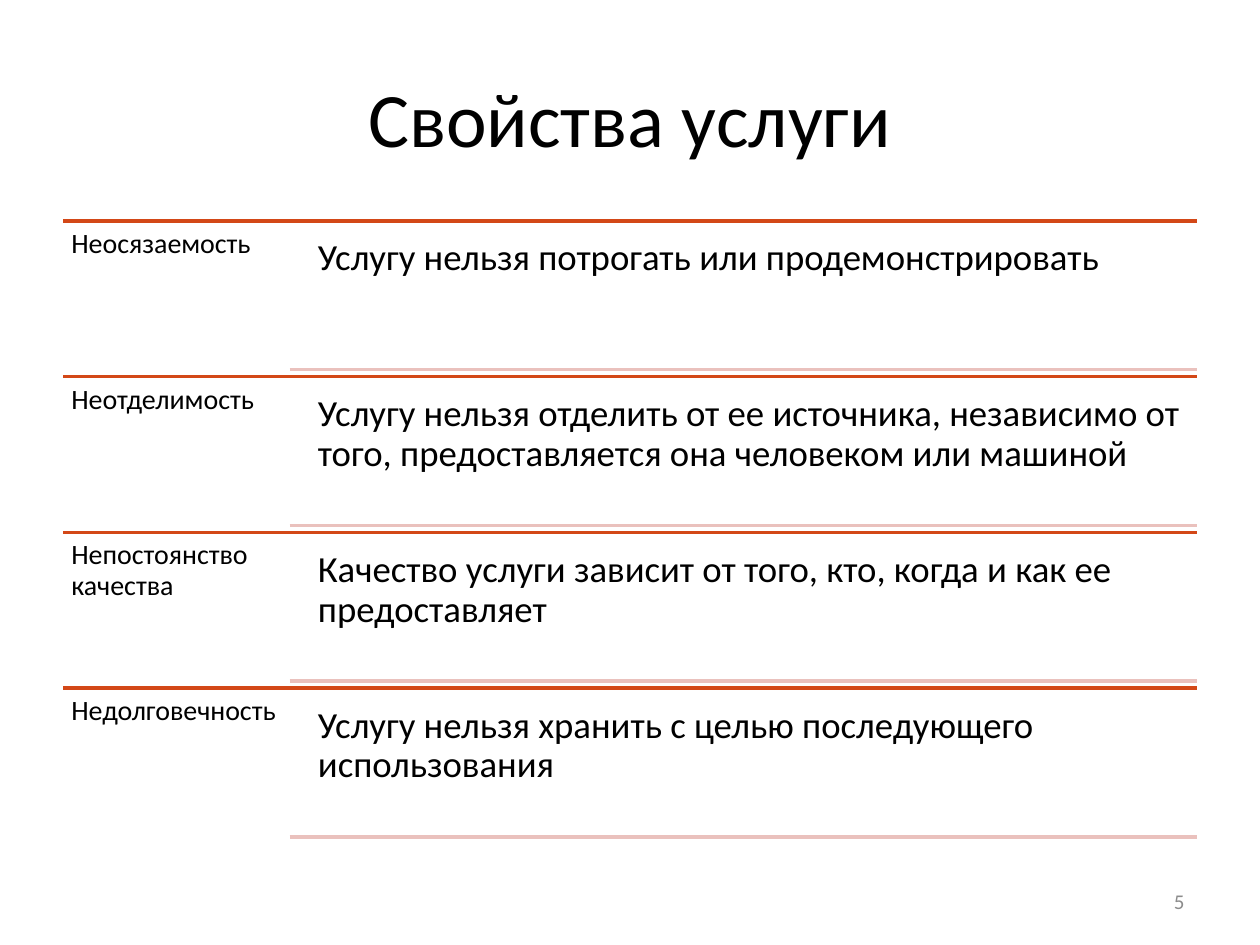
"""Build the slide listing the four properties of a service."""
from dataclasses import dataclass

from lxml.etree import SubElement
from pptx import Presentation
from pptx.dml.color import RGBColor
from pptx.enum.shapes import MSO_CONNECTOR as Connector
from pptx.enum.text import MSO_ANCHOR as Anchor, PP_ALIGN as Align
from pptx.oxml.ns import qn
from pptx.slide import Slide
from pptx.text.text import TextFrame
from pptx.util import Cm, Pt

COLORS = {"text": "000000", "rule": "D34817", "underline": "EAC1BD", "number": "8C8C8C"}
FONT = "Calibri"
LEFT, RIGHT = 1.27, 24.13
TOP, PITCH = 4.45, 3.14
NAME_WIDTH = 4.57
MEANING_LEFT, MEANING_WIDTH = 6.19, 17.95
MEANING_OFFSET, MEANING_HEIGHT = 0.15, 2.85


@dataclass(frozen=True)
class Box:
    left: float
    top: float
    width: float
    height: float


@dataclass(frozen=True)
class Property:
    name: str
    meaning: str


PROPERTIES = [
    Property("Неосязаемость", "Услугу нельзя потрогать или продемонстрировать"),
    Property(
        "Неотделимость",
        "Услугу нельзя отделить от ее источника, независимо от того, "
        "предоставляется она человеком или машиной",
    ),
    Property(
        "Непостоянство качества",
        "Качество услуги зависит от того, кто, когда и как ее предоставляет",
    ),
    Property("Недолговечность", "Услугу нельзя хранить с целью последующего использования"),
]


def write(frame: TextFrame, words: str, size: int, color: str = "text",
          align: Align = Align.LEFT, anchor: Anchor = Anchor.TOP) -> None:
    frame.text = words
    frame.word_wrap = True
    frame.vertical_anchor = anchor
    paragraph = frame.paragraphs[0]
    paragraph.alignment = align
    for run in paragraph.runs:
        run.font.name = FONT
        run.font.size = Pt(size)
        run.font.color.rgb = RGBColor.from_string(COLORS[color])


def add_frame(slide: Slide, box: Box) -> TextFrame:
    return slide.shapes.add_textbox(
        Cm(box.left), Cm(box.top), Cm(box.width), Cm(box.height)
    ).text_frame


def add_cell(slide: Slide, box: Box, words: str, size: int, inset: float) -> None:
    frame = add_frame(slide, box)
    write(frame, words, size)
    frame.margin_left = frame.margin_right = Cm(inset)
    frame.margin_top = frame.margin_bottom = Cm(inset)
    frame.paragraphs[0].line_spacing = 0.9


def add_rule(slide: Slide, left: float, top: float, color: str) -> None:
    rule = slide.shapes.add_connector(
        Connector.STRAIGHT, Cm(left), Cm(top), Cm(RIGHT), Cm(top)
    )
    rule.line.color.rgb = RGBColor.from_string(COLORS[color])
    rule.line.width = Pt(2)
    SubElement(rule.element.spPr, qn("a:effectLst"))


def add_property(slide: Slide, service: Property, top: float) -> None:
    meaning_top = top + MEANING_OFFSET
    add_rule(slide, LEFT, top, "rule")
    add_cell(slide, Box(LEFT, top, NAME_WIDTH, PITCH), service.name, 16, 0.17)
    add_cell(slide, Box(MEANING_LEFT, meaning_top, MEANING_WIDTH, MEANING_HEIGHT),
             service.meaning, 21, 0.22)
    add_rule(slide, LEFT + NAME_WIDTH, meaning_top + MEANING_HEIGHT, "underline")


def main() -> None:
    deck = Presentation()
    deck.slide_width, deck.slide_height = Cm(25.4), Cm(19.05)
    slide = deck.slides.add_slide(deck.slide_layouts[5])

    title = slide.shapes.title
    title.left, title.top = Cm(LEFT), Cm(0.76)
    title.width, title.height = Cm(RIGHT - LEFT), Cm(3.18)
    write(title.text_frame, "Свойства услуги", 44, align=Align.CENTER, anchor=Anchor.MIDDLE)

    for row, service in enumerate(PROPERTIES):
        add_property(slide, service, TOP + row * PITCH)

    page_number = add_frame(slide, Box(18.2, 17.66, 5.93, 1.01))
    write(page_number, "5", 12, "number", Align.RIGHT, Anchor.MIDDLE)
    deck.save("out.pptx")


if __name__ == "__main__":
    main()
